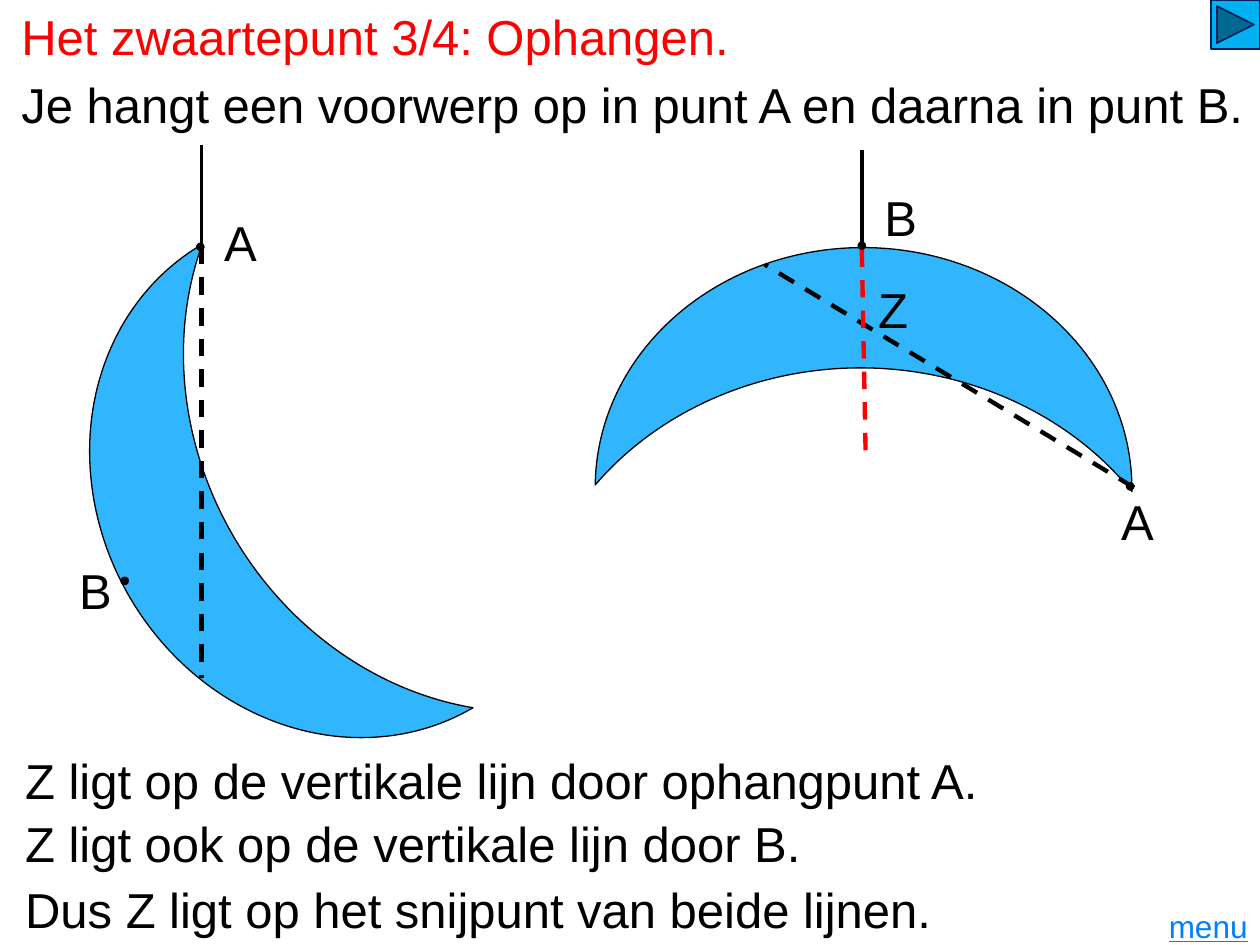
from lxml import etree
from pptx import Presentation
from pptx.dml.color import RGBColor
from pptx.enum.dml import MSO_LINE
from pptx.enum.shapes import MSO_CONNECTOR, MSO_SHAPE
from pptx.enum.text import MSO_ANCHOR, PP_ALIGN
from pptx.oxml.ns import qn
from pptx.util import Inches, Pt

STRAIGHT = MSO_CONNECTOR.STRAIGHT
MOON, DOT = MSO_SHAPE.MOON, MSO_SHAPE.OVAL
NEXT_BUTTON = MSO_SHAPE.ACTION_BUTTON_FORWARD_OR_NEXT
DASH = MSO_LINE.DASH
TOP, MIDDLE = MSO_ANCHOR.TOP, MSO_ANCHOR.MIDDLE
LEFT, RIGHT = PP_ALIGN.LEFT, PP_ALIGN.RIGHT
FONT = "Arial"
COLORS = {
    "black": "000000",
    "red": "FF0000",
    "moon": "31B6FD",
    "link": "0080FF",
    "button": "00B0F0",
    "navy": "002060",
}


class SlideBuilder:
    """Draws styled elements on the current slide."""

    def __init__(self, page):
        self.page = page

    def color(self, name):
        return RGBColor.from_string(COLORS[name])

    def style_text(self, box, text, color, size, anchor, align, inset, underline=None):
        frame = box.text_frame
        frame.text = text
        frame.word_wrap = True
        frame.vertical_anchor = anchor
        frame.margin_left = Inches(inset)
        para = frame.paragraphs[0]
        para.alignment = align
        font = para.runs[0].font
        font.name, font.size = FONT, Pt(size)
        font.color.rgb = self.color(color)
        font.underline = underline

    def title(self, text, left, top, width, height):
        box = self.page.shapes.title
        box.left, box.top = Inches(left), Inches(top)
        box.width, box.height = Inches(width), Inches(height)
        self.style_text(box, text, "red", 28, TOP, LEFT, 0.21)

    def text(self, text, left, top, width=0.52, height=0.57, color="black", size=28,
             anchor=TOP, align=LEFT, inset=0.1, underline=None):
        box = self.page.shapes.add_textbox(
            Inches(left), Inches(top), Inches(width), Inches(height))
        self.style_text(box, text, color, size, anchor, align, inset, underline)

    def shape(self, kind, left, top, width, height, fill, line, weight, rotation=0):
        shape = self.page.shapes.add_shape(
            kind, Inches(left), Inches(top), Inches(width), Inches(height))
        shape.shadow.inherit = False
        shape.rotation = rotation
        shape.fill.solid()
        shape.fill.fore_color.rgb = self.color(fill)
        shape.line.color.rgb = self.color(line)
        shape.line.width = Pt(weight)

    def moon(self, left, top, rotation):
        self.shape(MOON, left, top, 1.91, 4.26, "moon", "black", 0.75, rotation)

    def dot(self, left, top):
        self.shape(DOT, left, top, 0.04, 0.04, "black", "black", 2)

    def line(self, start, end, color="black", weight=2, dash=None):
        line = self.page.shapes.add_connector(
            STRAIGHT, *(Inches(value) for value in (*start, *end)))
        line.line.color.rgb = self.color(color)
        line.line.width = Pt(weight)
        line.line.dash_style = dash
        etree.SubElement(line._element.spPr, qn("a:effectLst"))


def main():
    deck = Presentation()
    deck.slide_width, deck.slide_height = Inches(10), Inches(7.5)
    builder = SlideBuilder(deck.slides.add_slide(deck.slide_layouts[5]))

    builder.title("Het zwaartepunt 3/4: Ophangen.", -0.04, 0, 6.3, 0.58)
    builder.text("Je hangt een voorwerp op in punt A en daarna in punt B.",
                 -0.04, 0.54, 10.08, inset=0.21)

    builder.line((1.6, 1.94), (1.6, 1.15))
    builder.moon(0.9, 2.13, 329.7)
    builder.line((1.6, 1.96), (1.6, 5.38), weight=2.5, dash=DASH)

    builder.moon(5.91, 0.79, 90.7)
    builder.line((9, 3.87), (6.07, 2.1), weight=2.5, dash=DASH)
    builder.line((6.84, 1.97), (6.84, 1.19))
    builder.line((6.84, 1.98), (6.87, 3.58), "red", 2.5, DASH)

    for left, top in ((1.57, 1.94), (0.97, 4.59), (6.82, 1.93), (8.95, 3.84)):
        builder.dot(left, top)
    for name, left, top in (("A", 1.68, 1.64), ("B", 0.53, 4.4), ("A", 8.8, 3.85),
                            ("B", 6.92, 1.44), ("Z", 6.87, 2.17)):
        builder.text(name, left, top)

    conclusions = (
        ("Z ligt op de vertikale lijn door ophangpunt A.", 5.9),
        ("Z ligt ook op de vertikale lijn door B.", 6.4),
        ("Dus Z ligt op het snijpunt van beide lijnen.", 6.92),
    )
    for sentence, top in conclusions:
        builder.text(sentence, 0, top, 9, 0.58, anchor=MIDDLE, inset=0.2)

    builder.text("menu", 9.06, 7.19, 0.94, 0.31, "link", 18, MIDDLE, RIGHT,
                 underline=True)
    builder.shape(NEXT_BUTTON, 9.61, 0, 0.39, 0.39, "button", "navy", 1)
    deck.save("out.pptx")


if __name__ == "__main__":
    main()
